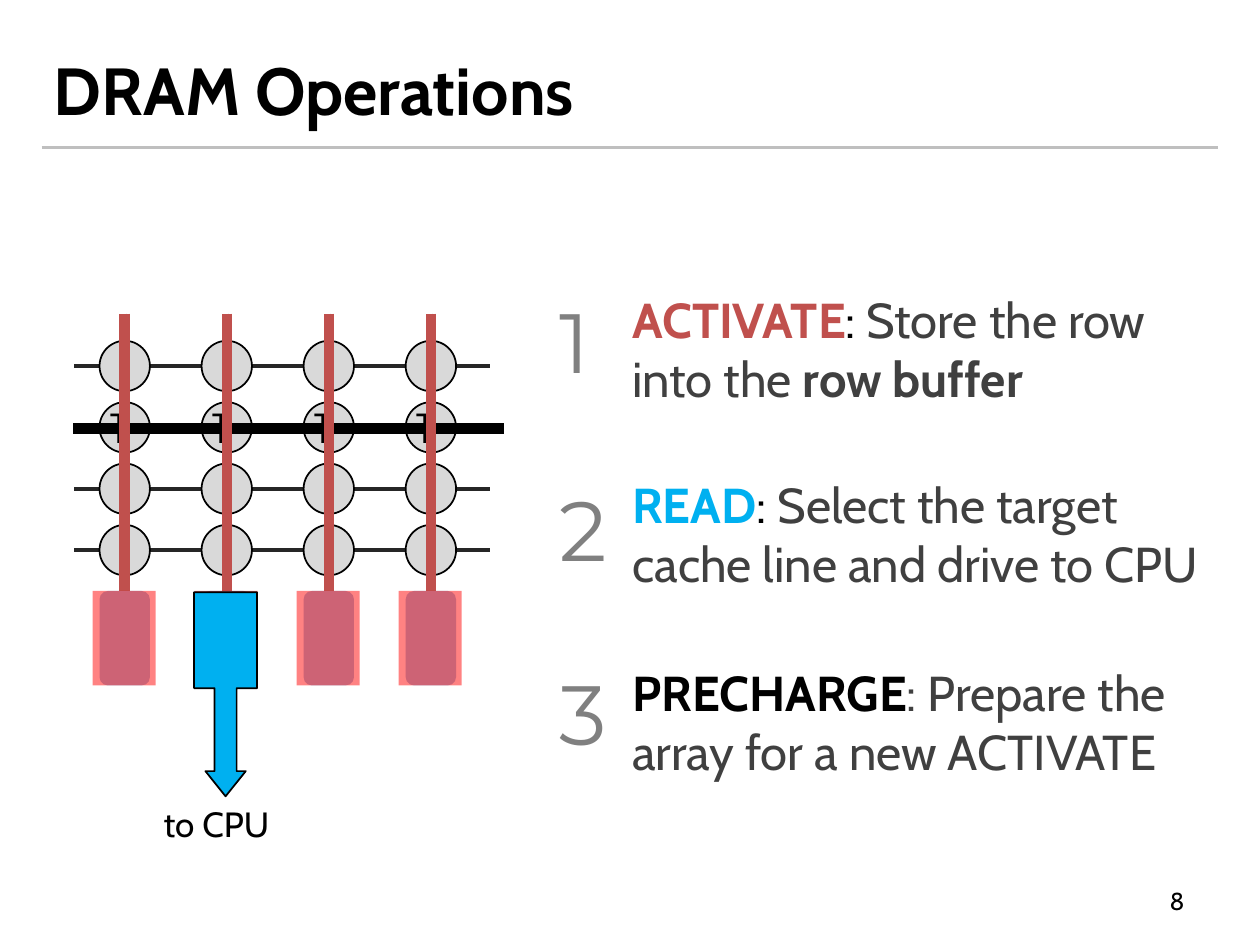
from lxml import etree
from pptx import Presentation
from pptx.dml.color import RGBColor
from pptx.enum.shapes import MSO_CONNECTOR, MSO_SHAPE
from pptx.enum.text import MSO_ANCHOR, MSO_AUTO_SIZE, PP_ALIGN
from pptx.oxml.ns import qn
from pptx.util import Inches, Pt

STRAIGHT = MSO_CONNECTOR.STRAIGHT
CIRCLE, RECTANGLE = MSO_SHAPE.OVAL, MSO_SHAPE.RECTANGLE
ROUNDED, CALLOUT = MSO_SHAPE.ROUNDED_RECTANGLE, MSO_SHAPE.RIGHT_ARROW_CALLOUT
TOP, MIDDLE = MSO_ANCHOR.TOP, MSO_ANCHOR.MIDDLE
LEFT, RIGHT = PP_ALIGN.LEFT, PP_ALIGN.RIGHT
GROW, FIXED = MSO_AUTO_SIZE.SHAPE_TO_FIT_TEXT, MSO_AUTO_SIZE.NONE

COLUMNS, ROWS = 100, 75
BODY, NUMERAL = "Cabin", "Montserrat"
BLACK, DARK, WIRE, GRAY = "000000", "404040", "262626", "808080"
RED, BLUE = "C0504D", "00B0F0"


def color(value):
    return RGBColor.from_string(value)


class SlideBuilder:
    """Draws on one slide; lengths are columns and rows of its grid."""

    def __init__(self, presentation):
        self.slide = presentation.slides.add_slide(presentation.slide_layouts[6])
        self.column = presentation.slide_width / COLUMNS
        self.row = presentation.slide_height / ROWS

    def place(self, x, y, x2, y2):
        return (round(x * self.column), round(y * self.row),
                round(x2 * self.column), round(y2 * self.row))

    def text(self, box, runs, size, font=BODY, wrap=True, auto_size=GROW,
             anchor=TOP, align=LEFT):
        shape = self.slide.shapes.add_textbox(*self.place(*box))
        frame_format = {"word_wrap": wrap, "auto_size": auto_size,
                        "vertical_anchor": anchor}
        for name, value in frame_format.items():
            setattr(shape.text_frame, name, value)
        paragraph = shape.text_frame.paragraphs[0]
        paragraph.alignment = align
        for words, run_color, bold in runs:
            for index, line in enumerate(words.split("\n")):
                if index:
                    paragraph.add_line_break()
                run = paragraph.add_run()
                run.text = line
                font_format = {"name": font, "size": Pt(size), "bold": bold}
                for name, value in font_format.items():
                    setattr(run.font, name, value)
                run.font.color.rgb = color(run_color)

    def line(self, ends, line_color, width):
        connector = self.slide.shapes.add_connector(STRAIGHT, *self.place(*ends))
        connector.line.color.rgb = color(line_color)
        connector.line.width = Pt(width)
        etree.SubElement(connector._element.spPr, qn("a:effectLst"))

    def shape(self, kind, box, fill, outline=None, opacity=None):
        shape = self.slide.shapes.add_shape(kind, *self.place(*box))
        shape.shadow.inherit = False
        shape.fill.solid()
        shape.fill.fore_color.rgb = color(fill)
        if outline:
            shape.line.color.rgb = color(outline)
            shape.line.width = Pt(1)
        else:
            shape.line.fill.background()
        if opacity:
            fill_color = shape._element.spPr.find(qn("a:solidFill"))[0]
            etree.SubElement(fill_color, qn("a:alpha"), val=str(opacity * 1000))
        return shape


def draw_array(builder):
    bit_lines = [9.9 + 8.1 * i for i in range(4)]
    word_lines = [29.05 + 4.87 * i for i in range(4)]
    top, buffer_top, buffer_height = 24.9, 46.9, 7.5
    cell = 4

    # Word lines, then each column with its buffer, bit line and cells
    for y in word_lines:
        builder.line((5.9, y, 38.9, y), WIRE, 2.25)
    for x in bit_lines:
        builder.shape(ROUNDED, (x - cell / 2, buffer_top, cell, buffer_height), "9DC3E6")
        builder.line((x, top, x, buffer_top), WIRE, 2.25)
        for y in word_lines:
            builder.shape(CIRCLE, (x - cell / 2, y - cell / 2, cell, cell),
                          "D9D9D9", BLACK)

    # Stored values under the activated row
    for x in bit_lines:
        builder.text((x - 2.15, 31.4, 4.3, 5), [("1", BLACK, False)], 24, NUMERAL, wrap=False)
    builder.line((5.8, 34, 40, 34), BLACK, 6)

    # Driven bit lines and the filled row buffer
    for x in bit_lines:
        builder.line((x, top, x, buffer_top), RED, 6)
    for x in bit_lines:
        builder.shape(RECTANGLE, (x - 2.55, buffer_top, 5, buffer_height),
                      "FF0000", opacity=49)


def draw_operations(builder):
    operations = [
        (22.5, 22.5, 47.6, False, [("ACTIVATE", RED, True), (":", BLACK, False),
                                   (" Store the row \ninto the ", DARK, False),
                                   ("row buffer", DARK, True)]),
        (37.2, 37.4, 47.7, False, [("READ", BLUE, True), (": ", BLACK, False),
                                   ("Select the target \ncache line and drive to CPU",
                                    DARK, False)]),
        (52.1, 52, 52.3, True, [("PRECHARGE", BLACK, True),
                                (": Prepare the array for a new ACTIVATE", DARK, False)]),
    ]
    for number, (y, number_y, width, wrap, runs) in enumerate(operations, 1):
        builder.text((49.2, y, width, 10.4), runs, 28, wrap=wrap)
        builder.text((43.4, number_y, 6.5, 9.1), [(str(number), GRAY, False)], 48,
                     NUMERAL, wrap=False)


def main():
    presentation = Presentation()
    presentation.slide_width, presentation.slide_height = Inches(10), Inches(7.5)
    builder = SlideBuilder(presentation)

    # Title, rule and page number
    builder.line((3.3, 11.7, 96.7, 11.7), "BFBFBF", 1.5)
    builder.text((3.3, 0.8, 93.3, 12.5), [("DRAM Operations", BLACK, True)], 38,
                 auto_size=FIXED, anchor=MIDDLE)
    builder.text((71.7, 69.5, 23.3, 4), [("8", BLACK, False)], 14,
                 auto_size=FIXED, anchor=MIDDLE, align=RIGHT)

    draw_operations(builder)
    draw_array(builder)

    # Selected cache line on its way to the CPU
    builder.text((12, 63.2, 12, 4.4), [("to CPU", BLACK, False)], 20)
    arrow = builder.shape(CALLOUT, (9.8, 52.6, 16.2, 5), BLUE, BLACK)
    arrow.rotation = 90
    for index, value in enumerate((0.35, 0.32, 0.4, 0.47)):
        arrow.adjustments[index] = value

    presentation.save("out.pptx")


if __name__ == "__main__":
    main()
